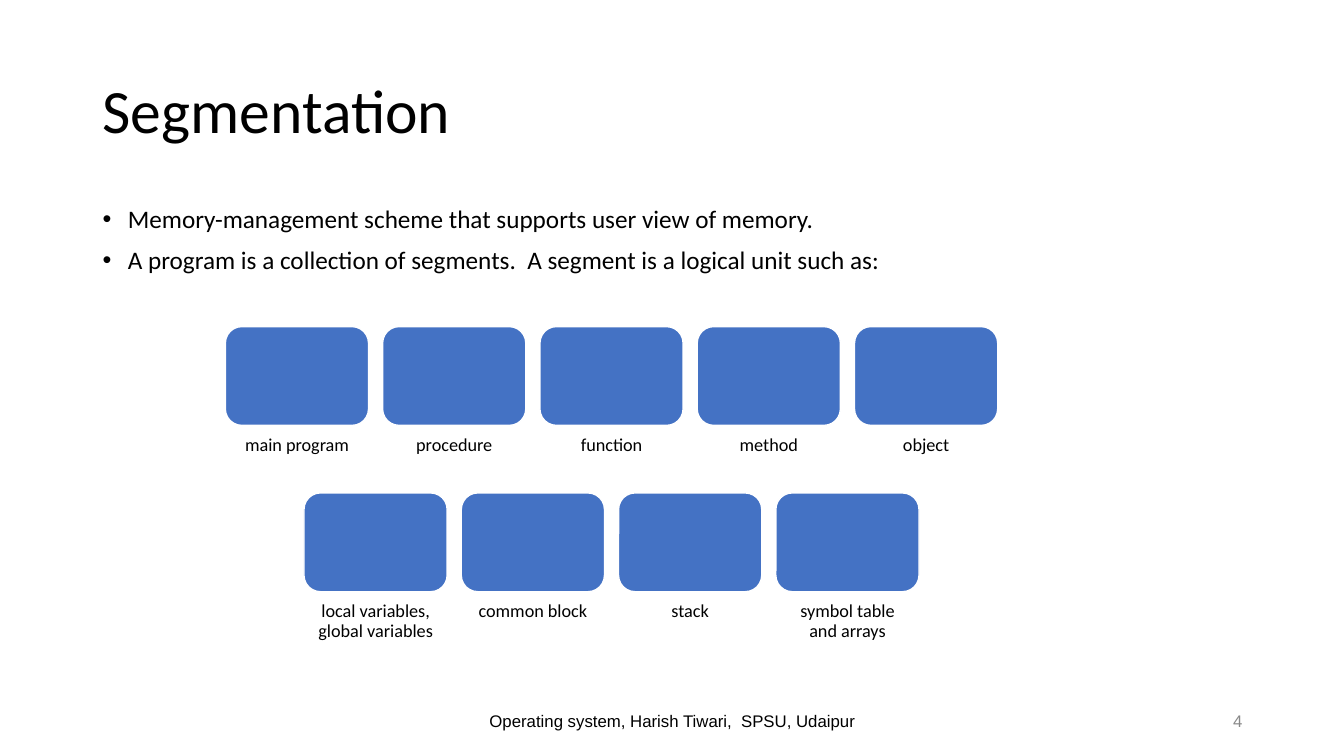
from lxml import etree
from pptx import Presentation
from pptx.dml.color import RGBColor
from pptx.enum import shapes, text
from pptx.oxml import ns
from pptx.util import Inches, Pt

BLACK = RGBColor(0x00, 0x00, 0x00)
WHITE = RGBColor(0xFF, 0xFF, 0xFF)
GREY = RGBColor(0x89, 0x89, 0x89)
BLUE = RGBColor(0x44, 0x72, 0xC4)

POINTS = [
    "Memory-management scheme that supports user view of memory.",
    "A program is a collection of segments.  A segment is a logical unit such as:",
]
SEGMENT_ROWS = [
    ["main program", "procedure", "function", "method", "object"],
    ["local variables, global variables", "common block", "stack", "symbol table and arrays"],
]
TILE_WIDTH, TILE_HEIGHT, LABEL_HEIGHT = 1.42, 0.98, 0.53
TILE_PITCH, ROW_PITCH = 1.56, 1.65


def add_text(page, box, lines, size, font="Calibri", color=BLACK,
             align=text.PP_ALIGN.LEFT, anchor=text.MSO_ANCHOR.TOP, line_spacing=1.0):
    frame = page.shapes.add_textbox(*map(Inches, box)).text_frame
    frame.word_wrap = True
    frame.vertical_anchor = anchor
    frame.text = "\n".join(lines)
    for para in frame.paragraphs:
        para.alignment = align
        para.line_spacing = line_spacing
        para.font.name = font
        para.font.size = Pt(size)
        para.font.color.rgb = color
    return frame


def add_title(page, box):
    add_text(page, box, ["Segmentation"], 44,
             anchor=text.MSO_ANCHOR.MIDDLE, line_spacing=0.9)


def add_points(page, box):
    frame = add_text(page, box, POINTS, 18, line_spacing=0.9)
    for para in frame.paragraphs:
        para.space_before = Pt(10)
        properties = para._p.get_or_add_pPr()
        properties.set("marL", str(Inches(0.25)))
        properties.set("indent", str(Inches(-0.25)))
        bullet_font = etree.Element(ns.qn("a:buFont"), typeface="Arial")
        bullet = etree.Element(ns.qn("a:buChar"), char="•")
        properties.insert_element_before(bullet_font, "a:tabLst", "a:defRPr", "a:extLst")
        properties.insert_element_before(bullet, "a:tabLst", "a:defRPr", "a:extLst")


def add_segment(page, left, top, name):
    tile = page.shapes.add_shape(
        shapes.MSO_SHAPE.ROUNDED_RECTANGLE,
        Inches(left), Inches(top), Inches(TILE_WIDTH), Inches(TILE_HEIGHT))
    tile.shadow.inherit = False
    tile.fill.solid()
    tile.fill.fore_color.rgb = BLUE
    tile.line.color.rgb = WHITE
    tile.line.width = Pt(1)
    label = add_text(page, (left, top + TILE_HEIGHT, TILE_WIDTH, LABEL_HEIGHT), [name], 13,
                     align=text.PP_ALIGN.CENTER, line_spacing=0.9)
    label.margin_left = label.margin_right = label.margin_top = Inches(0.1)
    label.margin_bottom = 0


def add_segments(page, box):
    left, top, width, height = box
    for row, names in enumerate(SEGMENT_ROWS):
        row_width = (len(names) - 1) * TILE_PITCH + TILE_WIDTH
        row_left = left + (width - row_width) / 2
        for column, name in enumerate(names):
            add_segment(page, row_left + column * TILE_PITCH, top + row * ROW_PITCH, name)


def add_footer(page, box):
    left, top, width, height = box
    add_text(page, (left + 3.5, top, 4.5, height),
             ["Operating system, Harish Tiwari,  SPSU, Udaipur"], 12, "Arial",
             align=text.PP_ALIGN.CENTER, anchor=text.MSO_ANCHOR.MIDDLE)
    add_text(page, (left + width - 3, top, 3, height), ["4"], 12, "Arial", GREY,
             text.PP_ALIGN.RIGHT, text.MSO_ANCHOR.MIDDLE)


def main():
    deck = Presentation()
    deck.slide_width = Inches(13.33)
    deck.slide_height = Inches(7.5)
    page = deck.slides.add_slide(deck.slide_layouts[6])
    add_title(page, (0.92, 0.4, 11.5, 1.45))
    add_points(page, (0.92, 2, 11.5, 1))
    add_segments(page, (2.23, 3.24, 7.67, 3.16))
    add_footer(page, (0.92, 6.95, 11.5, 0.4))
    deck.save("out.pptx")


if __name__ == "__main__":
    main()
